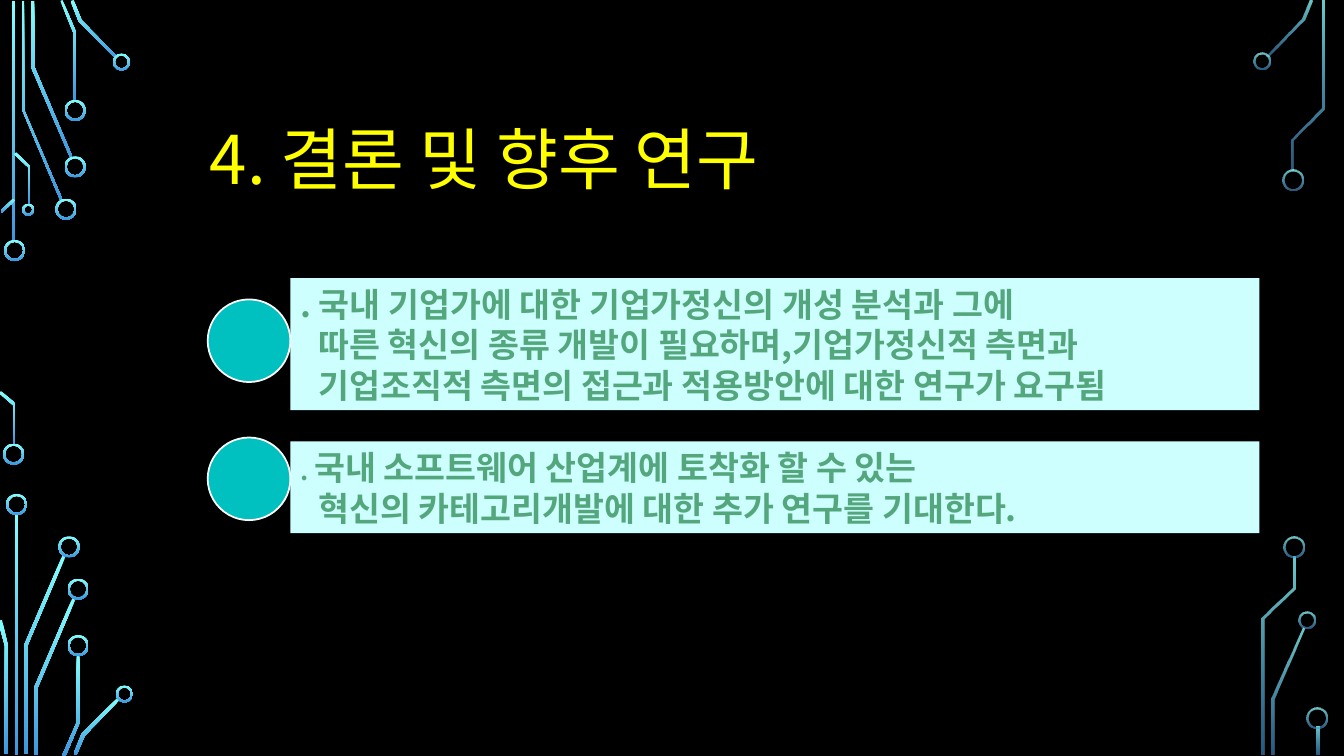
"""Build the conclusion slide with circuit traces on a black background."""
from lxml import etree
from pptx import Presentation
from pptx.dml.color import RGBColor
from pptx.enum.shapes import MSO_SHAPE
from pptx.enum.text import MSO_ANCHOR, PP_ALIGN
from pptx.oxml.ns import qn
from pptx.util import Inches, Pt

RECT, OVAL, DONUT = MSO_SHAPE.RECTANGLE, MSO_SHAPE.OVAL, MSO_SHAPE.DONUT
MIDDLE, LEFT = MSO_ANCHOR.MIDDLE, PP_ALIGN.LEFT
FONT = "Noto Sans CJK KR"
BLACK = RGBColor(0x00, 0x00, 0x00)
WHITE = RGBColor(0xFF, 0xFF, 0xFF)
YELLOW = RGBColor(0xFF, 0xFF, 0x00)
GREEN = RGBColor(0x54, 0xA7, 0x7D)
PALE = RGBColor(0xCD, 0xFF, 0xFF)
TEAL = RGBColor(0x00, 0xC0, 0xC0)
CYAN = RGBColor(0x82, 0xFF, 0xFF)
BLUE = RGBColor(0x3D, 0x97, 0xDE)

BARS = [(0.12, 0.01, 2.39), (0.15, 5.1, 2.39), (13.06, 7.21, 0.28)]
TRACES = [
    [(0.6, 1.99), (0.22, 1.09), (0.22, 0.01), (0.24, 0.01), (0.24, 1.09), (0.62, 1.98)],
    [(0.7, 1.57), (0.31, 0.67), (0.31, 0.01), (0.34, 0.01), (0.34, 0.66), (0.72, 1.56)],
    [(0.76, 1), (0.73, 1), (0.73, 0.33), (0.6, 0.01), (0.62, 0), (0.76, 0.33)],
    [(1.15, 0.58), (0.78, 0.21), (0.7, 0.01), (0.73, 0), (0.81, 0.2), (1.16, 0.56)],
    [(0.02, 2.11), (0.01, 2.09), (0.13, 1.97), (0.15, 1.99)],
    [(0.15, 4.41), (0.13, 4.41), (0.13, 4.02), (-0.01, 3.9), (0.01, 3.88), (0.15, 4)],
    [(0.3, 2.03), (0.28, 2.03), (0.28, 1.66), (0.14, 1.53), (0.16, 1.51), (0.3, 1.65)],
    [(0.27, 7.48), (0.24, 7.48), (0.24, 6.4), (0.62, 5.51), (0.65, 5.52), (0.27, 6.41)],
    [(0.08, 7.48), (0.05, 7.48), (0.05, 6.41), (-0.02, 6.16), (0.02, 6.15), (0.08, 6.41)],
    [(0.37, 7.49), (0.34, 7.49), (0.34, 6.82), (0.72, 5.93), (0.75, 5.94), (0.37, 6.83)],
    [(0.65, 7.5), (0.62, 7.49), (0.76, 7.17), (0.76, 6.5), (0.79, 6.5), (0.79, 7.17)],
    [(0.76, 7.49), (0.73, 7.48), (0.81, 7.28), (1.17, 6.92), (1.19, 6.94), (0.84, 7.3)],
    [(12.58, 0.56), (12.56, 0.55), (12.91, 0.19), (12.99, 0), (13.02, 0.01), (12.94, 0.2)],
    [(12.64, 7.49), (12.61, 7.49), (12.61, 6.93), (12.92, 6.23), (12.94, 6.24), (12.64, 6.94)],
    [(12.83, 1.69), (12.81, 1.69), (12.81, 1.38), (13.11, 1.07), (13.11, 0.01),
     (13.14, 0.01), (13.14, 1.08), (12.83, 1.39)],
    [(12.54, 7.49), (12.51, 7.49), (12.51, 6.13), (12.82, 5.83), (12.82, 5.52),
     (12.85, 5.52), (12.85, 5.84), (12.54, 6.14)],
]
RINGS = {
    0.21: [(0.04, 2.38), (0.03, 4.4), (0.55, 1.97), (0.64, 1.55), (0.64, 0.99),
           (0.06, 4.9), (0.58, 5.32), (0.67, 5.74), (0.67, 6.3),
           (12.72, 1.68), (12.73, 5.32), (12.96, 7.02)],
    0.17: [(1.12, 0.53), (1.15, 6.8), (12.43, 0.52), (12.88, 6.07)],
    0.12: [(0.22, 2.02)],
}
FINDINGS = [
    (2.76, 1.31, 2.97, [
        [(". 국내 기업가에 대한 기업가정신의 개성 분석과 그에", 24)],
        [("따른 혁신의 종류 개발이 필요하며,기업가정신적 측면과", 24)],
        [("기업조직적 측면의 접근과 적용방안에 대한 연구가 요구됨", 24)]]),
    (4.38, 0.91, 4.34, [
        [(". ", 18), ("국내 소프트웨어 산업계에 토착화 할 수 있는", 24)],
        [("혁신의 카테고리개발에 대한 추가 연구를 기대한다.", 24)]]),
]


def add_text(p, text, size, color, bold=False):
    r = p.add_run()
    r.text = text
    r.font.size, r.font.bold, r.font.name = Pt(size), bold, FONT
    r.font.color.rgb = color
    etree.SubElement(r.font._element, qn("a:ea"), typeface=FONT)


def paint_circuit(sp):
    sp.shadow.inherit = False
    sp.line.fill.background()
    sp.fill.gradient()
    sp.fill.gradient_angle = 270
    for stop, color in zip(sp.fill.gradient_stops, (CYAN, BLUE)):
        stop.color.rgb = color
    if sp.left > Inches(6):
        for clr, alpha in zip(sp._element.iter(qn("a:srgbClr")), ("80000", "60000")):
            etree.SubElement(clr, qn("a:alpha"), val=alpha)


prs = Presentation()
prs.slide_width, prs.slide_height = Inches(13.33), Inches(7.5)
s = prs.slides.add_slide(prs.slide_layouts[5])
s.background.fill.solid()
s.background.fill.fore_color.rgb = BLACK

for x, y, height in BARS:
    paint_circuit(s.shapes.add_shape(RECT, Inches(x), Inches(y), Inches(0.03), Inches(height)))
for points in TRACES:
    outline = [(Inches(x), Inches(y)) for x, y in points]
    builder = s.shapes.build_freeform(*outline[0])
    builder.add_line_segments(outline[1:], close=True)
    paint_circuit(builder.convert_to_shape())
for size, corners in RINGS.items():
    for x, y in corners:
        ring = s.shapes.add_shape(DONUT, Inches(x), Inches(y), Inches(size), Inches(size))
        ring.adjustments[0] = 0.02 / size
        paint_circuit(ring)

title = s.shapes.title
title.left, title.top = Inches(1.98), Inches(1.15)
title.width, title.height = Inches(11.11), Inches(0.93)
tf = title.text_frame
tf.word_wrap, tf.vertical_anchor = True, MIDDLE
p = tf.paragraphs[0]
p.alignment, p.line_spacing = LEFT, 0.9
add_text(p, "4. 결론 및 향후 연구", 48, YELLOW)

for top, height, dot_top, lines in FINDINGS:
    box = s.shapes.add_shape(RECT, Inches(2.88), Inches(top), Inches(9.61), Inches(height))
    box.shadow.inherit = False
    box.fill.solid()
    box.fill.fore_color.rgb = PALE
    box.line.fill.background()
    tf = box.text_frame
    tf.word_wrap, tf.vertical_anchor = True, MIDDLE
    for i, runs in enumerate(lines):
        p = tf.add_paragraph() if i else tf.paragraphs[0]
        p.alignment, p.line_spacing = LEFT, Pt(29)
        if i:
            p._p.get_or_add_pPr().set("marL", str(Inches(0.18)))
        for text, size in runs:
            add_text(p, text, size, GREEN, bold=True)

    dot = s.shapes.add_shape(OVAL, Inches(2.06), Inches(dot_top), Inches(0.82), Inches(0.82))
    dot.shadow.inherit = False
    dot.fill.solid()
    dot.fill.fore_color.rgb = TEAL
    dot.line.color.rgb = WHITE
    dot.line.width = Pt(1.25)

prs.save("out.pptx")
